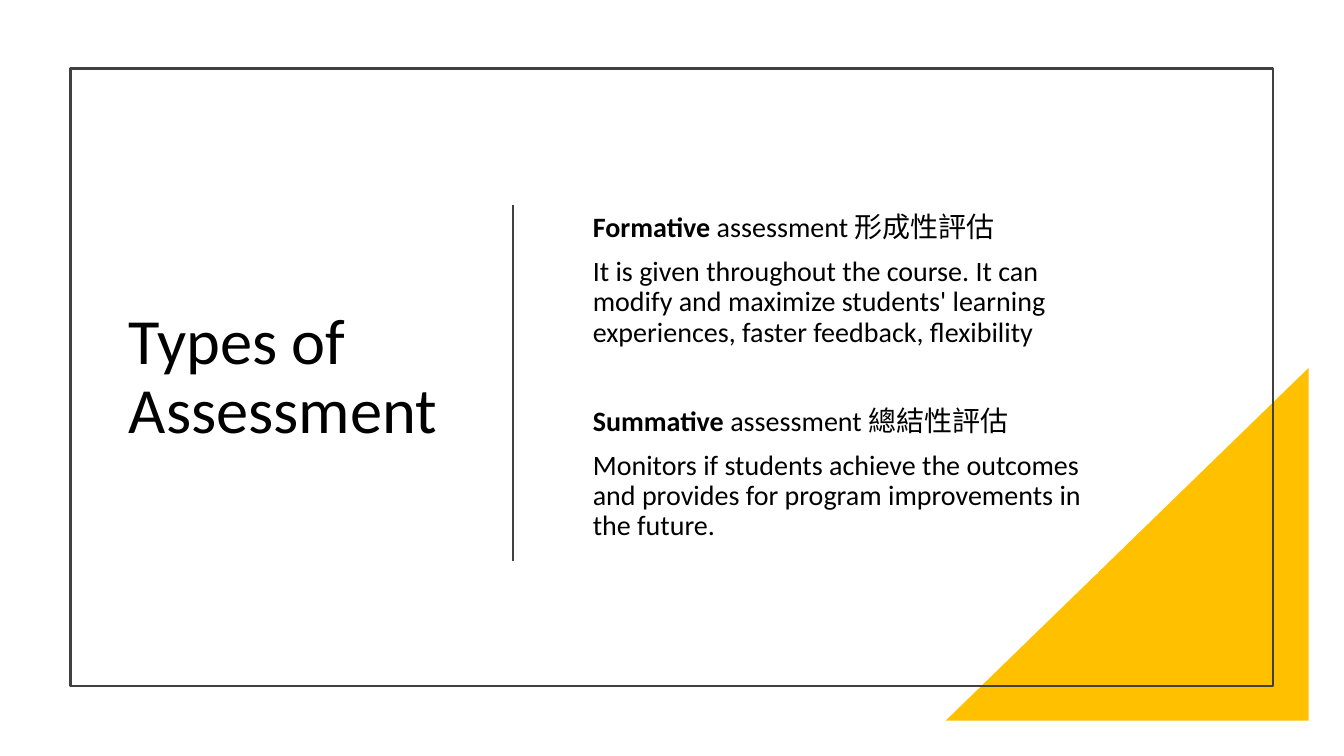
from pptx import Presentation
from pptx.dml.color import RGBColor
from pptx.enum import shapes, text
from pptx.oxml import ns, xmlchemy
from pptx.util import Inches, Pt

BLACK = RGBColor(0x00, 0x00, 0x00)
WHITE = RGBColor(0xFF, 0xFF, 0xFF)
GREY = RGBColor(0x40, 0x40, 0x40)
AMBER = RGBColor(0xFF, 0xC0, 0x00)

# Each entry: bold term, rest of the heading, description
ASSESSMENTS = [
    ("Formative ", "assessment 形成性評估",
     "It is given throughout the course. It can modify and maximize students' "
     "learning experiences, faster feedback, flexibility"),
    ("Summative ", "assessment 總結性評估",
     "Monitors if students achieve the outcomes and provides for program "
     "improvements in the future."),
]


def set_line(line):
    line.color.rgb = GREY
    line.width = Pt(1.5)


def add_span(para, words, size, bold=False):
    span = para.add_run()
    span.text = words
    span.font.color.rgb = BLACK
    for name, value in {"name": "Calibri", "size": Pt(size), "bold": bold}.items():
        setattr(span.font, name, value)


def add_text_box(page, left, top, width, height):
    box = page.shapes.add_textbox(Inches(left), Inches(top), Inches(width), Inches(height))
    settings = {"word_wrap": True, "vertical_anchor": text.MSO_ANCHOR.MIDDLE,
                "auto_size": text.MSO_AUTO_SIZE.NONE}
    for name, value in settings.items():
        setattr(box.text_frame, name, value)
    return box


def add_corner(page, left, top, width, height):
    corner = page.shapes.add_shape(shapes.MSO_SHAPE.RIGHT_TRIANGLE, Inches(left),
                                   Inches(top), Inches(width), Inches(height))
    corner.shadow.inherit = False
    corner.fill.solid()
    corner.fill.fore_color.rgb = AMBER
    corner.line.fill.background()
    # Mirror it so the right angle sits at the lower right
    corner.element.spPr.find(ns.qn("a:xfrm")).set("flipH", "1")


def add_frame(page, left, top, width, height):
    frame = page.shapes.add_shape(shapes.MSO_SHAPE.RECTANGLE, Inches(left),
                                  Inches(top), Inches(width), Inches(height))
    frame.shadow.inherit = False
    frame.fill.background()
    set_line(frame.line)


def add_title(page, left, top, width, height):
    box = add_text_box(page, left, top, width, height)
    para = box.text_frame.paragraphs[0]
    para.line_spacing = 0.9
    add_span(para, "Types of Assessment", 46)


def add_divider(page, left, top, height):
    divider = page.shapes.add_connector(shapes.MSO_CONNECTOR.STRAIGHT, Inches(left),
                                        Inches(top), Inches(left), Inches(top + height))
    set_line(divider.line)
    divider.element.spPr.append(xmlchemy.OxmlElement("a:effectLst"))


def add_assessments(page, left, top, width, height):
    box = add_text_box(page, left, top, width, height)
    box.fill.solid()
    box.fill.fore_color.rgb = WHITE
    frame = box.text_frame
    frame.margin_left = Inches(0.13)
    for index, (term, rest, description) in enumerate(ASSESSMENTS):
        # Heading, set well apart from the previous entry
        heading = frame.add_paragraph() if index else frame.paragraphs[0]
        heading.space_before = Pt(42 if index else 10)
        add_span(heading, term, 20, bold=True)
        add_span(heading, rest, 20)
        # Description
        detail = frame.add_paragraph()
        detail.space_before = Pt(10)
        add_span(detail, description, 20)
    for para in frame.paragraphs:
        para.line_spacing = 0.9


def main():
    deck = Presentation()
    deck.slide_width, deck.slide_height = Inches(13.33), Inches(7.5)
    page = deck.slides.add_slide(deck.slide_layouts[6])
    add_corner(page, 9.38, 3.65, 3.6, 3.5)
    add_frame(page, 0.7, 0.68, 11.93, 6.13)
    add_title(page, 1.18, 1.3, 3.27, 4.9)
    add_divider(page, 5.09, 2.03, 3.54)
    add_assessments(page, 5.75, 1.8, 5.14, 3.89)
    deck.save("out.pptx")


if __name__ == "__main__":
    main()
